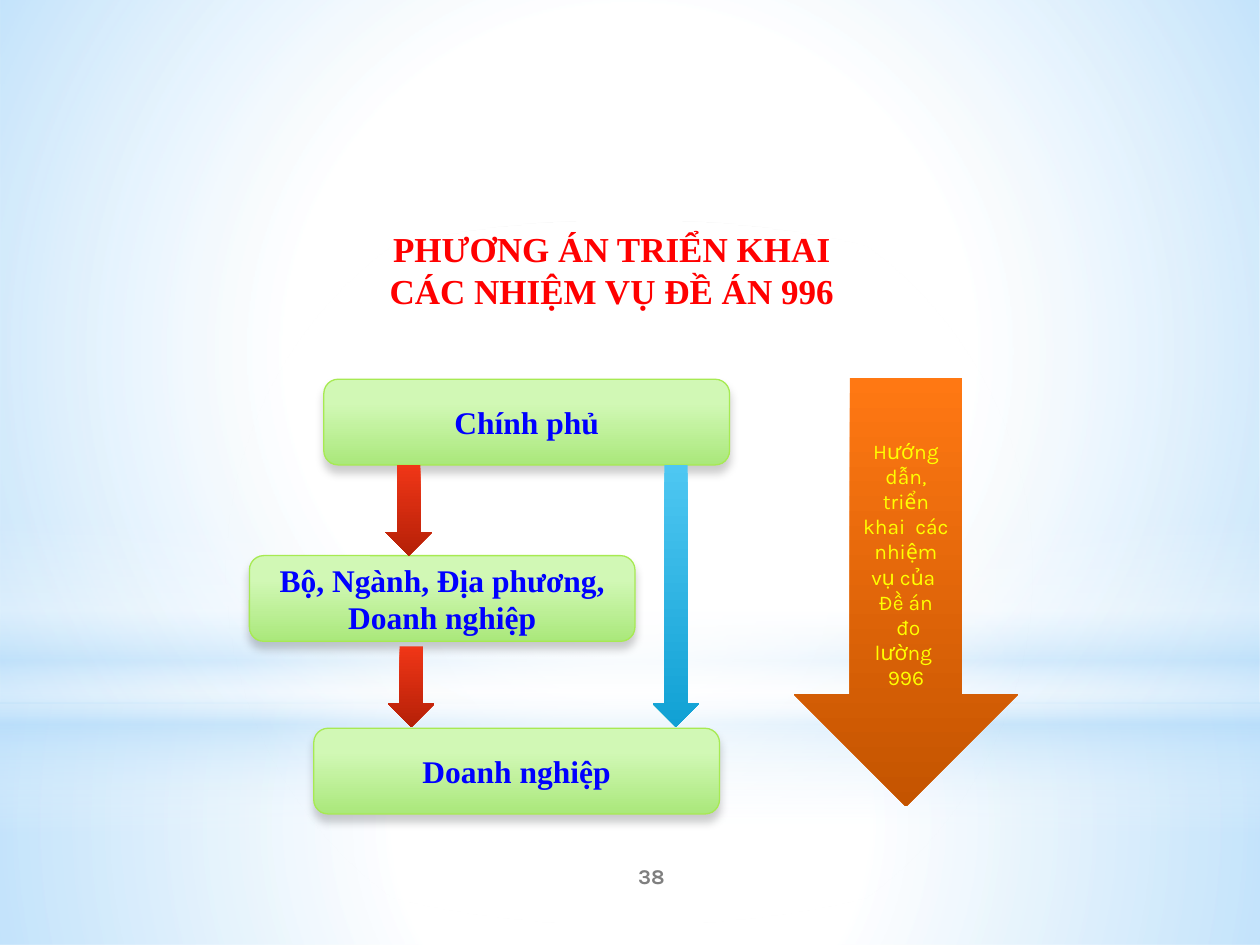
from lxml import etree
from pptx import Presentation
from pptx.dml.color import RGBColor
from pptx.enum.shapes import MSO_SHAPE
from pptx.enum.text import MSO_ANCHOR, PP_ALIGN
from pptx.oxml import parse_xml
from pptx.oxml.ns import nsdecls, qn
from pptx.util import Inches, Pt

RECT, OVAL = MSO_SHAPE.RECTANGLE, MSO_SHAPE.OVAL
ROUND, DOWN = MSO_SHAPE.ROUNDED_RECTANGLE, MSO_SHAPE.DOWN_ARROW
MIDDLE, TOP = MSO_ANCHOR.MIDDLE, MSO_ANCHOR.TOP
CENTER = PP_ALIGN.CENTER

SERIF, SANS = "Times New Roman", "Karla"
WHITE, SKY = "FFFFFF", "B4DCFA"
GREEN = [(28, "D1F8B5"), (100, "AAE87B")]
RED = [(0, "F03617"), (100, "B52007")]
BLUE = [(0, "4EC7F2"), (100, "11A1D4")]
ORANGE = [(0, "FF7813"), (100, "C45400")]


def rgb(code):
    return RGBColor.from_string(code)


def shade(shape, stops, radial=False):
    """Fill with (position, colour[, opacity]) stops, downwards or from the centre."""
    grad = parse_xml(f'<a:gradFill {nsdecls("a")} rotWithShape="1"><a:gsLst/></a:gradFill>')
    for pos, code, *alpha in stops:
        stop = etree.SubElement(grad[0], qn("a:gs"), pos=str(pos * 1000))
        color = etree.SubElement(stop, qn("a:srgbClr"), val=code)
        if alpha:
            etree.SubElement(color, qn("a:alpha"), val=str(alpha[0] * 1000))
    if radial:
        way = etree.SubElement(grad, qn("a:path"), path="circle")
        sides = dict.fromkeys("ltrb", "50000")
        etree.SubElement(way, qn("a:fillToRect"), sides)
    else:
        etree.SubElement(grad, qn("a:lin"), ang="5400000", scaled="0")
    shape.element.spPr.find(qn("a:prstGeom")).addnext(grad)


def add_form(slide, kind, box, stops, radial=False):
    shape = slide.shapes.add_shape(kind, *map(Inches, box))
    shape.shadow.inherit = False
    shape.line.fill.background()
    shade(shape, stops, radial)
    return shape


def write(shape, lines, size, font, color, bold=False, anchor=MIDDLE):
    frame = shape.text_frame
    frame.word_wrap = True
    frame.vertical_anchor = anchor
    frame.text = "\n".join(lines)
    for para in frame.paragraphs:
        para.alignment = CENTER
        para.font.size = Pt(size)
        para.font.name = font
        para.font.bold = bold
        para.font.color.rgb = rgb(color)


def add_label(slide, box, lines, *style):
    shape = slide.shapes.add_textbox(*map(Inches, box))
    write(shape, lines, *style)
    return shape


def add_backdrop(slide, wide, high):
    split = 5.58
    add_form(slide, RECT, (0, split, wide, high - split),
             [(0, WHITE, 91), (37, WHITE, 76), (100, SKY, 79)], True)
    add_form(slide, RECT, (0, 0, wide, split),
             [(0, WHITE, 89), (48, WHITE, 62), (100, SKY, 79)], True)
    # Light band across the horizon
    add_form(slide, RECT, (0, 4.12, wide, 2.5),
             [(0, WHITE, 0), (29, WHITE, 30), (45, SKY, 40),
              (55, WHITE, 26), (65, SKY, 60), (100, WHITE, 0)])
    # Glow
    add_form(slide, OVAL, (0, 1.75, wide, split), [(0, WHITE), (56, WHITE, 0)], True)


def add_title(slide, box):
    lines = ["PHƯƠNG ÁN TRIỂN KHAI ", "CÁC NHIỆM VỤ ĐỀ ÁN 996 "]
    title = add_label(slide, box, lines, 20, SERIF, "FF0000", True, TOP)
    for para in title.text_frame.paragraphs:
        para.level = 1
        props = para._p.get_or_add_pPr()
        props.set("marL", str(Inches(0.5)))
        props.set("indent", "0")


def add_card(slide, box, text):
    card = add_form(slide, ROUND, box, GREEN)
    card.line.color.rgb = rgb("A7EA52")
    card.line.width = Pt(0.75)
    effects = card.element.spPr.find(qn("a:effectLst"))
    shadow = etree.SubElement(effects, qn("a:outerShdw"), blurRad=str(Pt(5)),
                              dist=str(Pt(4)), dir="5400000", rotWithShape="0")
    color = etree.SubElement(shadow, qn("a:srgbClr"), val="000000")
    etree.SubElement(color, qn("a:alpha"), val="20000")
    write(card, [text], 18, SERIF, "0000FF", True)


def add_flow(slide, left, top):
    """Three levels of cards with the arrows between them."""
    cards = [
        (0.59, 0, 3.22, "Chính phủ"),
        (0, 1.4, 3.06, "Bộ, Ngành, Địa phương, Doanh nghiệp"),
        (0.51, 2.77, 3.22, "Doanh nghiệp"),
    ]
    for x, y, wide, text in cards:
        add_card(slide, (left + x, top + y, wide, 0.68), text)
    arrows = [(1.08, 0.68, 0.72, RED), (1.1, 2.12, 0.64, RED), (3.2, 0.68, 2.08, BLUE)]
    for x, y, high, stops in arrows:
        add_form(slide, DOWN, (left + x, top + y, 0.37, high), stops)


def add_guide(slide, box):
    lines = ["Hướng dẫn, triển khai  các nhiệm vụ của ", "Đề án", " đo lường ", "996"]
    arrow = add_form(slide, DOWN, box, ORANGE)
    write(arrow, lines, 12, SANS, "FFFF00")


def main():
    wide, high = 10, 7.5
    deck = Presentation()
    deck.slide_width, deck.slide_height = Inches(wide), Inches(high)
    slide = deck.slides.add_slide(deck.slide_layouts[6])
    add_backdrop(slide, wide, high)
    # Page number
    add_label(slide, (4.17, 6.75, 2, 0.4), ["38"], 12, SANS, "7F7F7F", True)
    add_title(slide, (1.6, 1.76, 6.08, 0.77))
    add_flow(slide, 1.98, 3.01)
    add_guide(slide, (6.3, 3, 1.78, 3.4))
    deck.save("out.pptx")


if __name__ == "__main__":
    main()
